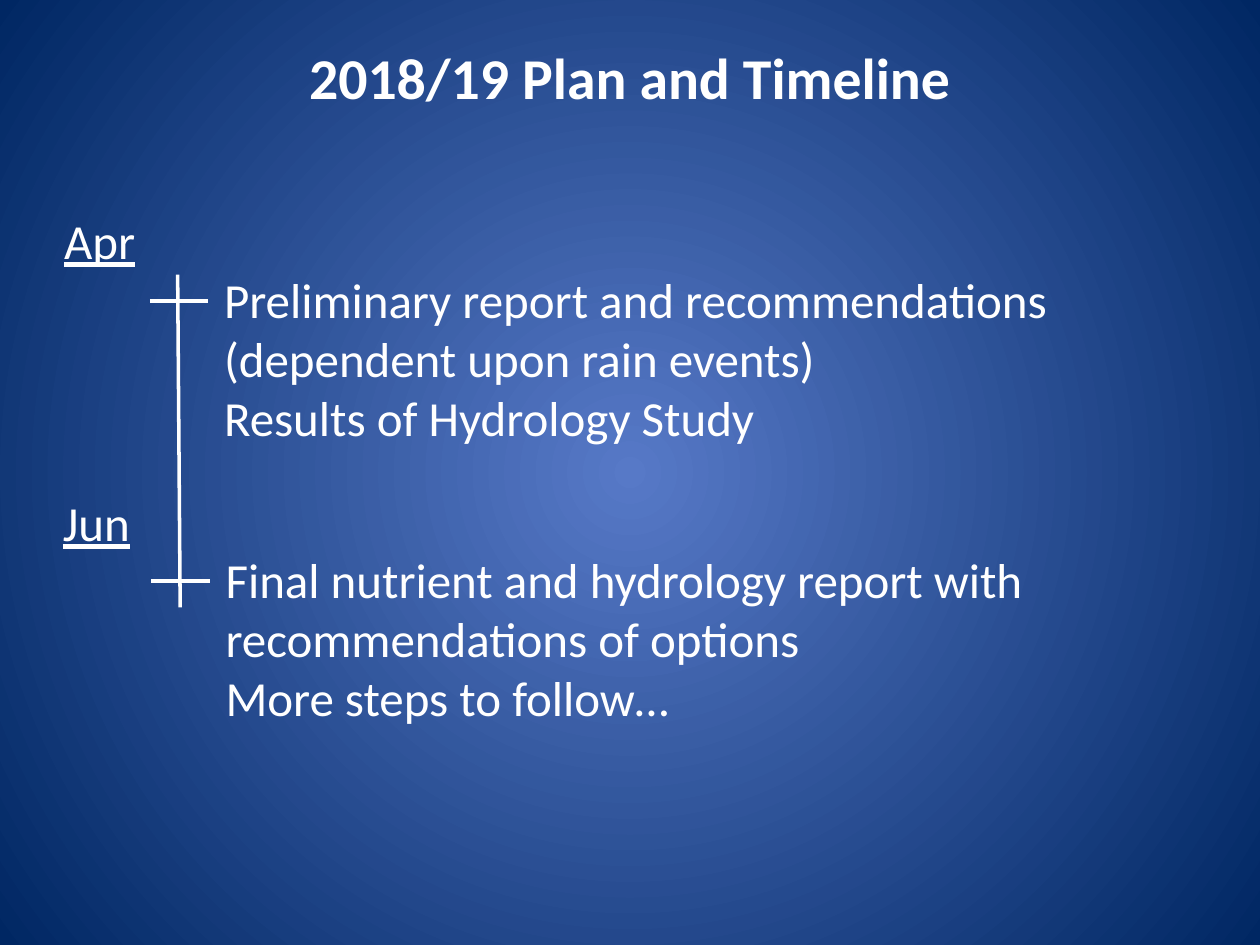
from lxml.etree import SubElement
from pptx import Presentation
from pptx.dml.color import RGBColor
from pptx.enum.shapes import MSO_CONNECTOR
from pptx.enum.text import MSO_ANCHOR, MSO_AUTO_SIZE, PP_ALIGN
from pptx.oxml.ns import qn
from pptx.util import Inches, Pt

WHITE = RGBColor(0xFF, 0xFF, 0xFF)
GLOW_BLUE = RGBColor(0x57, 0x79, 0xC7)
NAVY = RGBColor(0x00, 0x27, 0x63)

AXIS = (1.41, 2.18, 1.43, 4.82)
TICKS = [(1.19, 2.39, 1.65, 2.39), (1.2, 4.61, 1.67, 4.61)]
MONTHS = [("Apr", (0.41, 1.62, 0.85, 0.57)), ("Jun", (0.4, 3.86, 0.85, 0.57))]
MILESTONES = [
    (["Preliminary report and recommendations (dependent upon rain events)",
      "Results of Hydrology Study"], (1.68, 2.09, 7.18, 1.51), 0.1, 0.05),
    (["Final nutrient and hydrology report with recommendations of options",
      "More steps to follow…"], (1.75, 4.32, 8.35, 1.58), 0.04, 0.04),
]


def set_radial_background(slide):
    """Fill the background with a gradient that darkens from the centre."""
    fill = slide.background.fill
    fill.gradient()
    for stop, color, position in zip(fill.gradient_stops, (GLOW_BLUE, NAVY), (0, 1)):
        stop.color.rgb = color
        stop.position = position
    gradient = slide.element.find(".//" + qn("a:gradFill"))
    gradient.remove(gradient.find(qn("a:lin")))
    circle = SubElement(gradient, qn("a:path"), path="circle")
    SubElement(circle, qn("a:fillToRect"),
               {side: "50000" for side in ("l", "t", "r", "b")})


def style_font(font, size, bold=False, underline=False):
    """Apply the slide's white Calibri lettering."""
    font.name = "Calibri"
    font.size = Pt(size)
    font.color.rgb = WHITE
    font.bold = bold
    font.underline = underline


def set_title(slide, wording):
    """Place and format the title."""
    title = slide.shapes.title
    title.left, title.top, title.width, title.height = map(Inches, (0.5, 0.28, 9, 0.65))
    frame = title.text_frame
    frame.text = wording
    frame.auto_size = MSO_AUTO_SIZE.NONE
    frame.vertical_anchor = MSO_ANCHOR.MIDDLE
    heading = frame.paragraphs[0]
    heading.alignment = PP_ALIGN.CENTER
    style_font(heading.font, 33, bold=True)


def add_text(slide, lines, box, side_inset=0.1, end_inset=0.05, underline=False):
    """Add a wrapped text box with one paragraph per line."""
    frame = slide.shapes.add_textbox(*map(Inches, box)).text_frame
    frame.word_wrap = True
    frame.margin_left = frame.margin_right = Inches(side_inset)
    frame.margin_top = frame.margin_bottom = Inches(end_inset)
    frame.text = "\n".join(lines)
    for paragraph in frame.paragraphs:
        style_font(paragraph.font, 28, underline=underline)


def add_rule(slide, ends):
    """Add a plain white timeline stroke."""
    rule = slide.shapes.add_connector(MSO_CONNECTOR.STRAIGHT, *map(Inches, ends))
    rule.line.color.rgb = WHITE
    rule.line.width = Pt(2)
    SubElement(rule.element.spPr, qn("a:effectLst"))


def main():
    """Build and save the timeline slide."""
    deck = Presentation()
    deck.slide_width, deck.slide_height = Inches(10), Inches(7.5)
    slide = deck.slides.add_slide(deck.slide_layouts[5])
    set_radial_background(slide)
    set_title(slide, "2018/19 Plan and Timeline")
    for ends in [AXIS, *TICKS]:
        add_rule(slide, ends)
    for month, box in MONTHS:
        add_text(slide, [month], box, underline=True)
    for lines, box, side_inset, end_inset in MILESTONES:
        add_text(slide, lines, box, side_inset, end_inset)
    deck.save("out.pptx")


if __name__ == "__main__":
    main()
